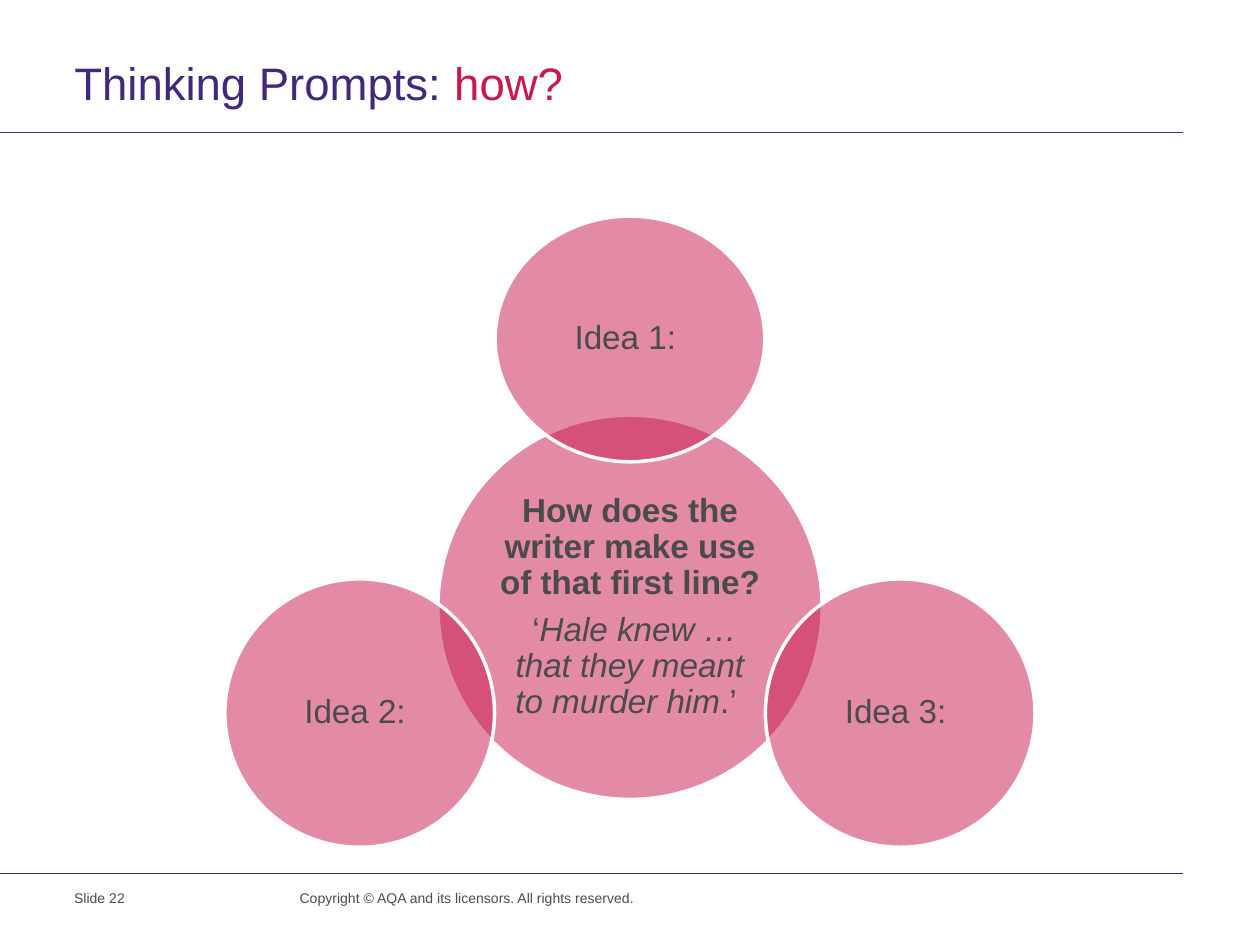
"""Builds the "Thinking Prompts: how?" slide with its radial Venn diagram."""
from dataclasses import dataclass

from lxml import etree
from pptx import Presentation
from pptx.dml.color import RGBColor
from pptx.enum.shapes import MSO_CONNECTOR, MSO_SHAPE
from pptx.enum.text import MSO_ANCHOR, MSO_AUTO_SIZE, PP_ALIGN
from pptx.oxml.ns import qn
from pptx.util import Inches, Pt

STRAIGHT = MSO_CONNECTOR.STRAIGHT
OVAL = MSO_SHAPE.OVAL
TOP, MIDDLE = MSO_ANCHOR.TOP, MSO_ANCHOR.MIDDLE
LEFT, CENTER = PP_ALIGN.LEFT, PP_ALIGN.CENTER
NO_AUTOFIT = MSO_AUTO_SIZE.NONE

WIDTH, HEIGHT = 10, 7.5
RULE_SHARE = 0.939
TITLE_RULE, FOOTER_RULE = 0.14, 0.924
FOOTER_TOP = 7.01
CENTRE_X = WIDTH / 2
SIDE_REACH = 2.145


@dataclass(frozen=True)
class Theme:
    """Colours, typeface and type sizes of the slide."""
    font: str = "Arial"
    purple: str = "412878"
    crimson: str = "C8194B"
    grey: str = "4B4B4B"
    white: str = "FFFFFF"
    title: float = 26
    idea: float = 19
    footer: float = 8


THEME = Theme()


def style_run(run, size, color, bold=False, italic=False):
    """Apply the theme typeface and the given look to a run."""
    run.font.name = THEME.font
    run.font.size = Pt(size)
    run.font.color.rgb = RGBColor.from_string(color)
    run.font.bold = bold
    run.font.italic = italic


def set_insets(frame, left, top, right, bottom):
    """Set the four text margins in inches."""
    frame.margin_left, frame.margin_top = Inches(left), Inches(top)
    frame.margin_right, frame.margin_bottom = Inches(right), Inches(bottom)


def add_title(slide, prompt, question):
    """Fill the title placeholder in two colours."""
    title = slide.shapes.title
    title.left, title.top = Inches(0.59), Inches(0.48)
    title.width, title.height = Inches(8.8), Inches(0.47)
    frame = title.text_frame
    frame.auto_size = NO_AUTOFIT
    frame.vertical_anchor = TOP
    set_insets(frame, 0, 0, 0.1, 0)
    heading = frame.paragraphs[0]
    heading.alignment = LEFT
    heading.line_spacing = Pt(28)
    for words, color in ((prompt, THEME.purple), (question, THEME.crimson)):
        run = heading.add_run()
        run.text = words
        style_run(run, THEME.title, color)


def add_rule(slide, height_share):
    """Draw a horizontal rule from the left edge at a share of the height."""
    y = Inches(HEIGHT * height_share)
    rule = slide.shapes.add_connector(
        STRAIGHT, 0, y, Inches(WIDTH * RULE_SHARE), y)
    rule.line.color.rgb = RGBColor.from_string(THEME.purple)
    rule.line.width = Pt(0.6)
    etree.SubElement(rule._element.spPr, qn("a:effectLst"))


def add_circle(slide, centre, size, paragraphs):
    """Add a half-transparent ellipse holding paragraphs of (text, bold, italic)."""
    (x, y), (width, height) = centre, size
    circle = slide.shapes.add_shape(
        OVAL, Inches(x - width / 2), Inches(y - height / 2),
        Inches(width), Inches(height))
    circle.shadow.inherit = False
    circle.fill.solid()
    circle.fill.fore_color.rgb = RGBColor.from_string(THEME.crimson)
    tint = circle._element.spPr.find(qn("a:solidFill"))[0]
    etree.SubElement(tint, qn("a:alpha"), val="50000")
    circle.line.color.rgb = RGBColor.from_string(THEME.white)
    circle.line.width = Pt(2)

    frame = circle.text_frame
    frame.word_wrap = True
    frame.vertical_anchor = MIDDLE
    set_insets(frame, 0.03, 0.03, 0.03, 0.03)
    for index, pieces in enumerate(paragraphs):
        paragraph = frame.add_paragraph() if index else frame.paragraphs[0]
        paragraph.alignment = CENTER
        paragraph.line_spacing = 0.9
        paragraph.space_after = Pt(THEME.idea * 0.35)
        for words, bold, italic in pieces:
            run = paragraph.add_run()
            run.text = words
            style_run(run, THEME.idea, THEME.grey, bold, italic)


def add_footer(slide, left, width, words):
    """Add a small footer text."""
    footer = slide.shapes.add_textbox(
        Inches(left), Inches(FOOTER_TOP), Inches(width), Inches(0.26))
    frame = footer.text_frame
    frame.word_wrap = True
    set_insets(frame, 0.1, 0.05, 0.1, 0.05)
    frame.text = words
    style_run(frame.paragraphs[0].runs[0], THEME.footer, THEME.grey)


def main():
    """Build and save the slide."""
    deck = Presentation()
    deck.slide_width, deck.slide_height = Inches(WIDTH), Inches(HEIGHT)
    slide = deck.slides.add_slide(deck.slide_layouts[5])

    for share in (TITLE_RULE, FOOTER_RULE):
        add_rule(slide, share)
    add_title(slide, "Thinking Prompts: ", "how?")

    question = [("How does the writer make use of that first line?", True, False)]
    quotation = [(" ‘", False, False),
                 ("Hale knew …that they meant to murder him", False, True),
                 (".’ ", False, False)]
    add_circle(slide, (CENTRE_X, 4.82), (3.05, 3.05), [question, quotation])

    ideas = (("Idea 1: ", 0, 2.69, 1.95),
             ("Idea 3: ", SIDE_REACH, 5.66, 2.13),
             ("Idea 2: ", -SIDE_REACH, 5.66, 2.13))
    for label, offset, y, height in ideas:
        add_circle(slide, (CENTRE_X + offset, y), (2.14, height),
                   [[(label, False, False)]])

    add_footer(slide, 0.49, 1.56, "Slide 22")
    add_footer(slide, 2.28, 2.93,
               "Copyright © AQA and its licensors. All rights reserved.")
    deck.save("out.pptx")


if __name__ == "__main__":
    main()
